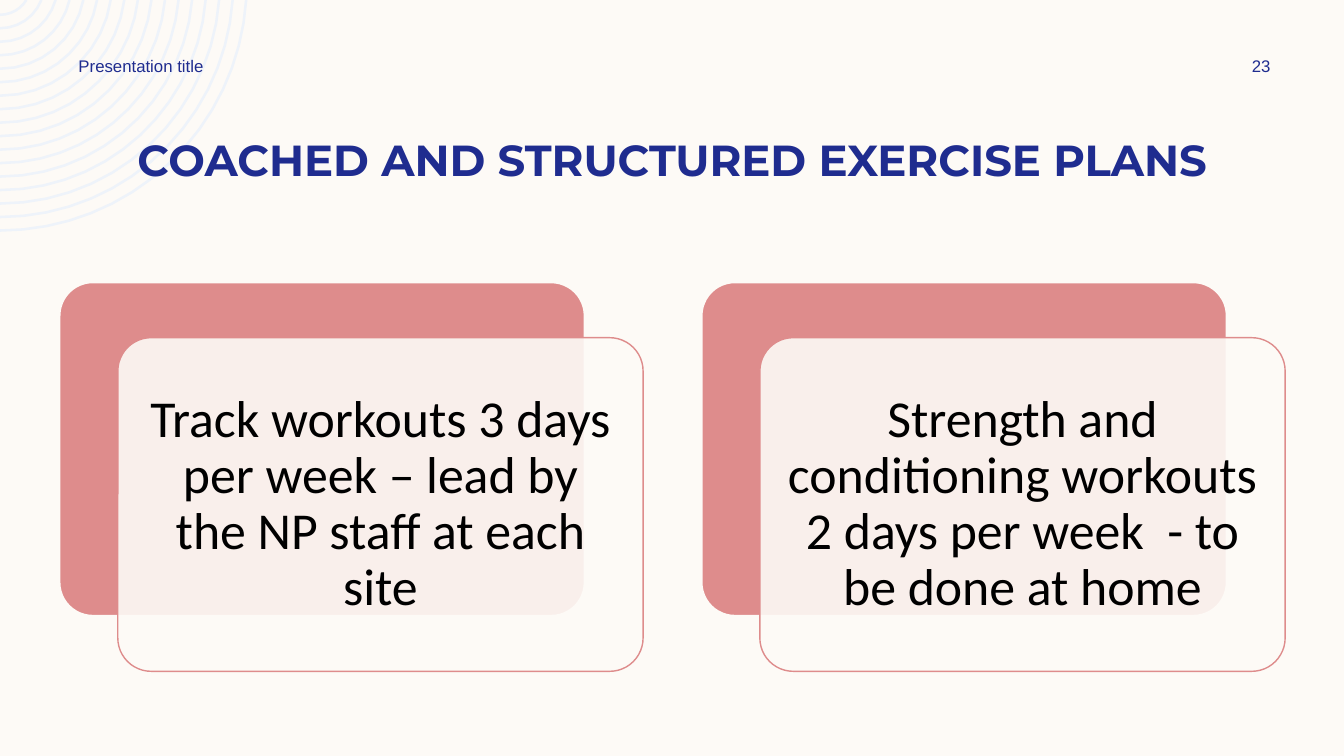
from math import asin, cos, pi, sin

from lxml.etree import SubElement
from pptx import Presentation
from pptx.dml.color import RGBColor
from pptx.enum.shapes import MSO_SHAPE as Preset
from pptx.enum.text import MSO_ANCHOR as Anchor, MSO_AUTO_SIZE as AutoSize, PP_ALIGN as Align
from pptx.oxml.ns import qn
from pptx.util import Pt

COLORS = {
    "cream": "FDFAF6",
    "mist": "EEF3FA",
    "navy": "1F2C8F",
    "rose": "DE8C8C",
    "black": "000000",
}
PLANS = [
    "Track workouts 3 days per week – lead by the NP staff at each site",
    "Strength and conditioning workouts 2 days per week  - to be done at home",
]


def color(name):
    """Return the named palette colour."""
    return RGBColor.from_string(COLORS[name])


def style(paragraph, font_name, size, color_name, align, bold=False):
    """Format a whole paragraph."""
    paragraph.alignment = align
    font = paragraph.font
    font.name, font.size, font.bold = font_name, Pt(size), bold
    font.color.rgb = color(color_name)


def arc(radius, depth):
    """Return points from the top edge to the left edge, centred depth above the corner."""
    steps = 5 + int(radius / 16)
    start = asin(depth / radius)
    angles = [start + (pi / 2 - start) * step / steps for step in range(steps + 1)]
    return [(radius * cos(angle), radius * sin(angle) - depth) for angle in angles]


def add_rings(slide, box, count=17, thickness=1.8, depth=11.5):
    """Draw concentric ring quarters in the corner box, behind the title."""
    left, top, width, height = box
    gap = (height - depth) / (count - 1)
    outer = height + depth - thickness / 2
    arcs = [
        [(Pt(left + x), Pt(top + y)) for x, y in arc(outer - index * gap, depth)]
        for index in range(count)
    ]
    builder = slide.shapes.build_freeform(*arcs[0][0])
    for index, points in enumerate(arcs):
        if index:
            builder.move_to(*points[0])
        builder.add_line_segments(points[1:], close=False)
    rings = builder.convert_to_shape()
    rings.shadow.inherit = False
    rings.fill.background()
    rings.line.color.rgb = color("mist")
    rings.line.width = Pt(thickness)
    slide.shapes.title._element.addprevious(rings._element)


def add_title(slide, box, text):
    """Fill and place the title placeholder."""
    title = slide.shapes.title
    title.left, title.top, title.width, title.height = map(Pt, box)
    frame = title.text_frame
    frame.text = text
    frame.word_wrap = True
    frame.auto_size = AutoSize.NONE
    frame.vertical_anchor = Anchor.TOP
    heading = frame.paragraphs[0]
    heading.line_spacing = 0.9
    style(heading, "Montserrat", 31, "navy", Align.CENTER, bold=True)


def add_header(slide, box, text, align):
    """Add a small header text."""
    frame = slide.shapes.add_textbox(*map(Pt, box)).text_frame
    frame.word_wrap = True
    frame.vertical_anchor = Anchor.MIDDLE
    frame.text = text
    style(frame.paragraphs[0], "Arial", 12, "navy", align)


def add_panel(slide, box, fill, line, line_width):
    """Add one rounded panel."""
    panel = slide.shapes.add_shape(Preset.ROUNDED_RECTANGLE, *map(Pt, box))
    panel.adjustments[0] = 0.1
    panel.shadow.inherit = False
    panel.fill.solid()
    panel.fill.fore_color.rgb = color(fill)
    panel.line.color.rgb = color(line)
    panel.line.width = Pt(line_width)
    return panel


def add_plan_card(slide, box, text, shift_x=41.7, shift_y=39.6):
    """Add a rose panel with a translucent text panel shifted over it."""
    left, top, width, height = box
    panel_size = (width - shift_x, height - shift_y)
    add_panel(slide, (left, top, *panel_size), "rose", "cream", 1.5)
    front = add_panel(slide, (left + shift_x, top + shift_y, *panel_size), "cream", "rose", 1)
    fill_color = front._element.spPr.find(qn("a:solidFill"))[0]
    SubElement(fill_color, qn("a:alpha"), val="90000")
    frame = front.text_frame
    frame.word_wrap = True
    frame.vertical_anchor = Anchor.MIDDLE
    frame.margin_left = frame.margin_right = Pt(10.8)
    frame.margin_top = frame.margin_bottom = Pt(10.8)
    frame.text = text
    plan = frame.paragraphs[0]
    plan.line_spacing = 0.9
    style(plan, "Calibri", 37, "black", Align.CENTER)


def add_plan_cards(slide, box, plans, gap=41.7):
    """Share the box width equally among the plan cards."""
    left, top, width, height = box
    card_width = (width - gap * (len(plans) - 1)) / len(plans)
    for index, plan in enumerate(plans):
        card_left = left + index * (card_width + gap)
        add_plan_card(slide, (card_left, top, card_width, height), plan)


def main():
    """Build and save the slide."""
    deck = Presentation()
    deck.slide_width, deck.slide_height = Pt(960), Pt(540)
    slide = deck.slides.add_slide(deck.slide_layouts[5])
    slide.background.fill.solid()
    slide.background.fill.fore_color.rgb = color("cream")
    add_title(slide, (60, 96, 840, 60.5), "COACHED AND STRUCTURED EXERCISE PLANS")
    add_rings(slide, (0, 0, 176.5, 165.6))
    add_header(slide, (49, 36, 252, 21.6), "Presentation title", Align.LEFT)
    add_header(slide, (862, 36, 77.8, 21.6), "23", Align.CENTER)
    add_plan_cards(slide, (42.5, 201.6, 875.5, 277.9), PLANS)
    deck.save("out.pptx")


if __name__ == "__main__":
    main()
